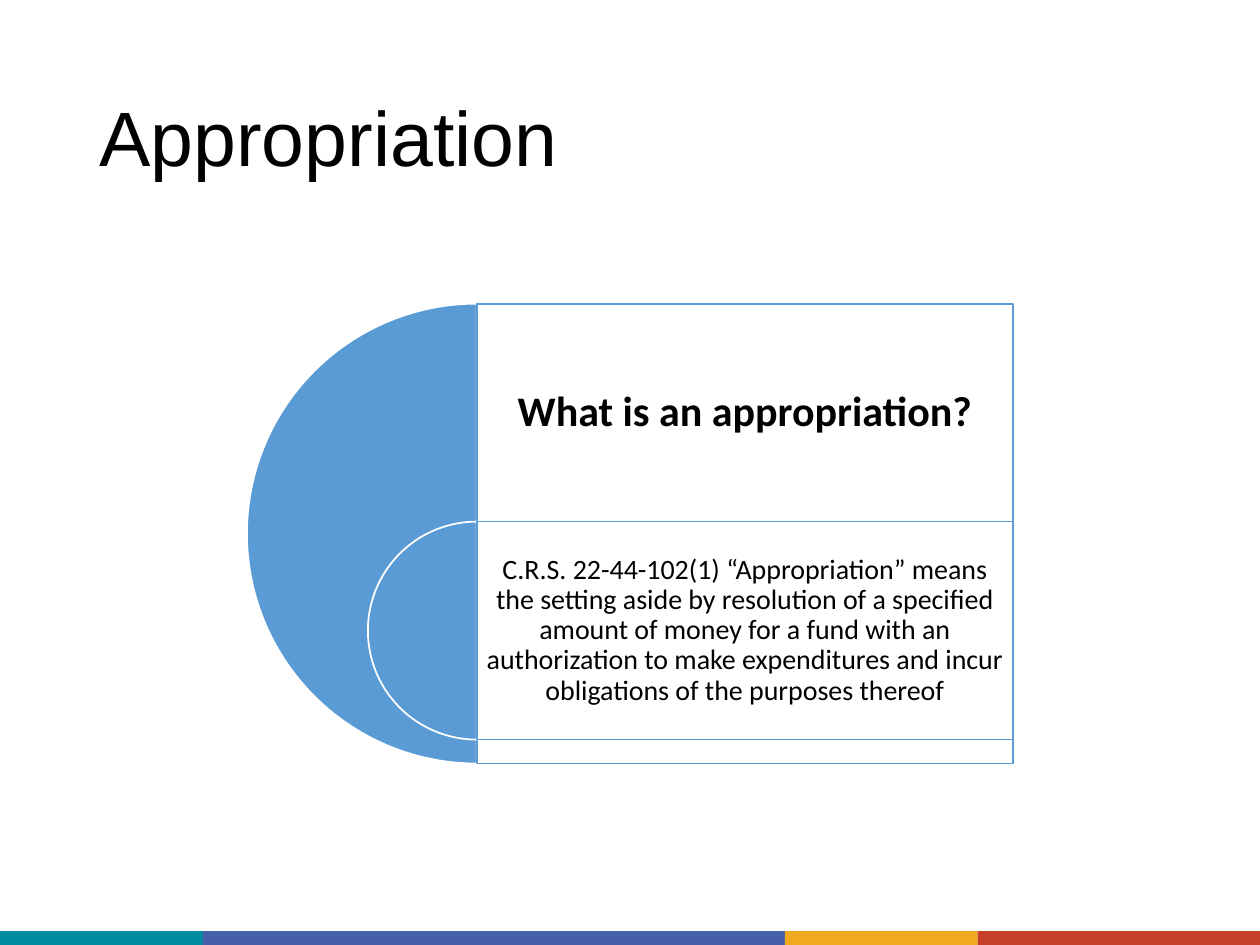
from lxml import etree
from pptx import Presentation
from pptx.dml.color import RGBColor
from pptx.enum.shapes import MSO_SHAPE
from pptx.enum.text import MSO_ANCHOR, PP_ALIGN
from pptx.oxml.ns import qn
from pptx.util import Inches, Pt

RECTANGLE = MSO_SHAPE.RECTANGLE
PIE = MSO_SHAPE.PIE
MIDDLE = MSO_ANCHOR.MIDDLE
LEFT = PP_ALIGN.LEFT
CENTER = PP_ALIGN.CENTER

BLUE = "5B9BD5"
WHITE = "FFFFFF"
BLACK = "000000"
DEFINITION = (
    "C.R.S. 22-44-102(1) “Appropriation” means the setting aside by resolution "
    "of a specified amount of money for a fund with an authorization to make "
    "expenditures and incur obligations of the purposes thereof"
)


def color(hex_value):
    return RGBColor.from_string(hex_value)


def add_block(slide, kind, box, fill, line=None, opacity=None):
    block = slide.shapes.add_shape(kind, *map(Inches, box))
    block.shadow.inherit = False
    block.fill.solid()
    block.fill.fore_color.rgb = color(fill)
    if opacity is not None:
        srgb = block.fill._xPr.find(qn("a:solidFill")).find(qn("a:srgbClr"))
        etree.SubElement(srgb, qn("a:alpha"), val=str(opacity * 1000))
    if line:
        block.line.color.rgb = color(line)
        block.line.width = Pt(1)
    else:
        block.line.fill.background()
    return block


def add_text(slide, box, text, *, size, font, bold=False, align=LEFT, inset=(0.1, 0.05)):
    label = slide.shapes.add_textbox(*map(Inches, box))
    frame = label.text_frame
    frame.word_wrap = True
    frame.vertical_anchor = MIDDLE
    frame.margin_left = frame.margin_right = Inches(inset[0])
    frame.margin_top = frame.margin_bottom = Inches(inset[1])
    paragraph = frame.paragraphs[0]
    paragraph.alignment = align
    paragraph.line_spacing = 0.9
    run = paragraph.add_run()
    run.text = text
    run.font.size = Pt(size)
    run.font.name = font
    run.font.bold = bold
    run.font.color.rgb = color(BLACK)


def add_footer_stripe(slide, box):
    left, top, width, height = box
    bands = [("008CA0", 1.61), ("455FA9", 4.62), ("EFAA1F", 1.53), ("C63F28", 2.24)]
    scale = width / sum(band_width for _, band_width in bands)
    for fill, band_width in bands:
        add_block(slide, RECTANGLE, (left, top, band_width * scale, height), fill)
        left += band_width * scale


def add_level(slide, box, diameter):
    left, top, width, _ = box
    half_disc = add_block(
        slide, PIE, (left - diameter / 2, top, diameter, diameter), BLUE, WHITE
    )
    half_disc.adjustments[0] = 54
    half_disc.adjustments[1] = 162
    add_block(slide, RECTANGLE, (left, top, width, diameter), WHITE, BLUE, opacity=90)


def add_target_list(slide, box):
    left, top, width, height = box
    row = 1.73
    panel_left = left + height / 2
    panel_width = width - height / 2
    question = (panel_left, top, panel_width, row)
    answer = (panel_left, top + row, panel_width, row)
    add_level(slide, question, height)
    add_text(slide, question, "What is an appropriation?", size=24, font="Calibri",
             bold=True, align=CENTER, inset=(0.1, 0.1))
    add_level(slide, answer, row)
    add_text(slide, answer, DEFINITION, size=16, font="Calibri",
             align=CENTER, inset=(0.07, 0.07))


def main():
    deck = Presentation()
    deck.slide_width = Inches(10)
    deck.slide_height = Inches(7.5)
    slide = deck.slides.add_slide(deck.slide_layouts[6])
    add_footer_stripe(slide, (0, 7.39, 10, 0.11))
    add_text(slide, (0.69, 0.4, 8.62, 1.45), "Appropriation", size=44, font="Arial")
    add_target_list(slide, (1.96, 2.41, 6.08, 3.65))
    deck.save("out.pptx")


if __name__ == "__main__":
    main()
